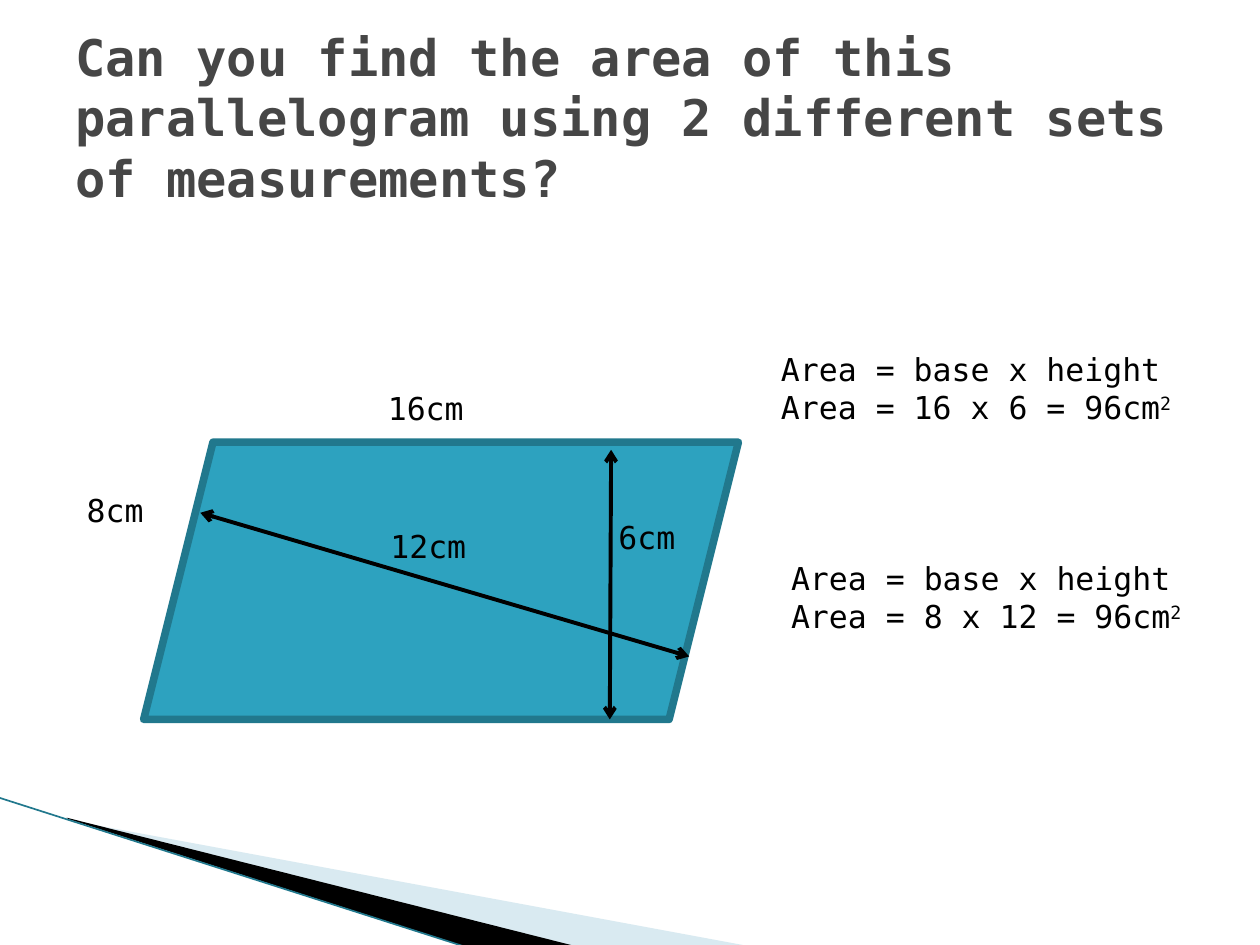
from lxml import etree
from pptx import Presentation
from pptx.dml.color import RGBColor
from pptx.enum.shapes import MSO_CONNECTOR, MSO_SHAPE
from pptx.enum.text import MSO_ANCHOR
from pptx.oxml.ns import qn
from pptx.util import Inches, Pt

STRAIGHT = MSO_CONNECTOR.STRAIGHT
PARALLELOGRAM = MSO_SHAPE.PARALLELOGRAM
TOP = MSO_ANCHOR.TOP
MIDDLE = MSO_ANCHOR.MIDDLE

FONT = "DejaVu Sans Mono"
BLACK = RGBColor(0x00, 0x00, 0x00)
GREY = RGBColor(0x46, 0x46, 0x46)
TEAL = RGBColor(0x2D, 0xA2, 0xBF)
DARK_TEAL = RGBColor(0x21, 0x78, 0x8D)
PALE_BLUE = RGBColor(0xA0, 0xCB, 0xDC)

deck = Presentation()
deck.slide_width = Inches(10)
deck.slide_height = Inches(7.5)
page = deck.slides.add_slide(deck.slide_layouts[6])


def add_text(place, lines, size=18, color=BLACK, bold=False, anchor=TOP):
    box = page.shapes.add_textbox(*[Inches(length) for length in place])
    frame = box.text_frame
    frame.word_wrap = True
    frame.vertical_anchor = anchor
    for index, pieces in enumerate(lines):
        para = frame.paragraphs[0] if index == 0 else frame.add_paragraph()
        for position, piece in enumerate(pieces):
            span = para.add_run()
            span.text = piece
            span.font.name = FONT
            span.font.size = Pt(size)
            span.font.bold = bold
            span.font.color.rgb = color
            if position == 1:
                span._r.get_or_add_rPr().set("baseline", "30000")


def add_line(ends, color, width, arrows=False):
    line = page.shapes.add_connector(STRAIGHT, *[Inches(length) for length in ends])
    line.line.color.rgb = color
    line.line.width = Pt(width)
    if arrows:
        outline = line.line._get_or_add_ln()
        for end in ("a:headEnd", "a:tailEnd"):
            etree.SubElement(outline, qn(end), type="arrow")
    etree.SubElement(line._element.spPr, qn("a:effectLst"))


wedges = [
    ([(0.55, 6.51), (5.95, 7.51), (4.56, 7.51), (0.55, 6.5)], PALE_BLUE, 40),
    ([(0.53, 6.49), (4.57, 7.51), (3.72, 7.52), (0.54, 6.5)], BLACK, 100),
]
for corners, color, opacity in wedges:
    points = [(Inches(x), Inches(y)) for x, y in corners]
    builder = page.shapes.build_freeform(*points[0])
    builder.add_line_segments(points[1:])
    wedge = builder.convert_to_shape()
    wedge.shadow.inherit = False
    wedge.fill.solid()
    wedge.fill.fore_color.rgb = color
    wedge.line.fill.background()
    if opacity < 100:
        tint = wedge._element.spPr.find(".//" + qn("a:srgbClr"))
        etree.SubElement(tint, qn("a:alpha"), val=str(opacity * 1000))

add_line((-0.01, 6.33, 3.71, 7.52), DARK_TEAL, 0.95)

title = "Can you find the area of this parallelogram using 2 different sets of measurements?"
add_text((0.5, 0.3, 9, 1.25), [[title]], 28.8, GREY, True, MIDDLE)

figure = page.shapes.add_shape(
    PARALLELOGRAM, Inches(1.14), Inches(3.51), Inches(4.72), Inches(2.2)
)
figure.shadow.inherit = False
figure.fill.solid()
figure.fill.fore_color.rgb = TEAL
figure.line.color.rgb = DARK_TEAL
figure.line.width = Pt(4.33)

labels = [("16cm", 2.98, 3.04), ("8cm", 0.59, 3.85), ("6cm", 4.81, 4.06), ("12cm", 3, 4.13)]
for label, left, top in labels:
    add_text((left, top, 1.1, 0.4), [[label]])

for ends in [(4.85, 3.57, 4.84, 5.71), (1.59, 4.07, 5.47, 5.21)]:
    add_line(ends, BLACK, 2.25, arrows=True)

for product, left, top in [("16 x 6", 6.1, 2.73), ("8 x 12", 6.18, 4.39)]:
    add_text(
        (left, top, 3.73, 1.01),
        [["Area = base x height"], [f"Area = {product} = 96cm", "2"]],
    )

deck.save("out.pptx")
